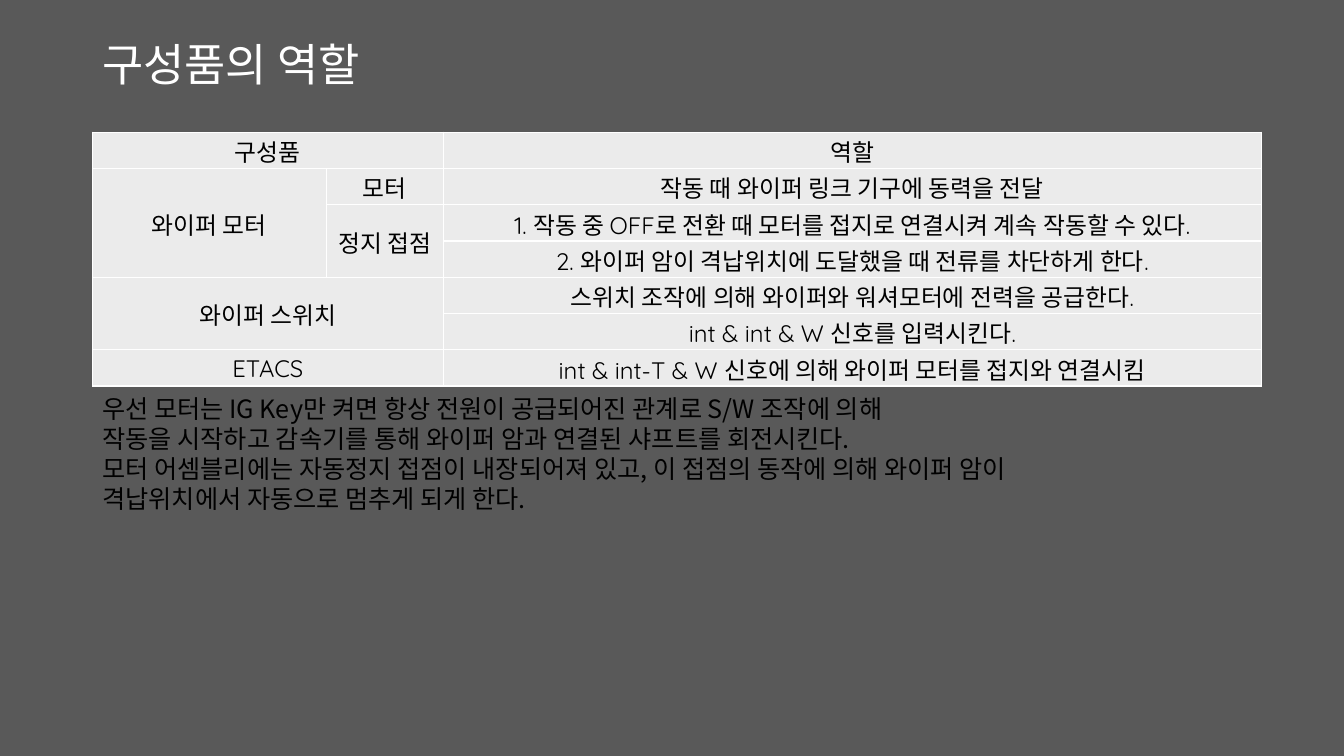
from lxml import etree
from pptx import Presentation
from pptx import util as u
from pptx.dml import color
from pptx.enum import text
from pptx.oxml import ns

COLORS = {"background": "595959", "cell": "EBEBEB", "light": "FFFFFF", "ink": "000000"}


def style_paragraph(paragraph, size, font_name, color_name):
    paragraph.font.size = u.Pt(size)
    paragraph.font.name = font_name
    paragraph.font.color.rgb = color.RGBColor.from_string(COLORS[color_name])


def border_cell(cell):
    properties = cell._tc.get_or_add_tcPr()
    for index, side in enumerate(("lnL", "lnR", "lnT", "lnB")):
        line = etree.Element(ns.qn(f"a:{side}"), w=str(u.Pt(1)))
        fill = etree.SubElement(line, ns.qn("a:solidFill"))
        etree.SubElement(fill, ns.qn("a:srgbClr"), val=COLORS["light"])
        properties.insert(index, line)


presentation = Presentation()
presentation.slide_width = u.Cm(33.87)
presentation.slide_height = u.Cm(19.05)
slide = presentation.slides.add_slide(presentation.slide_layouts[6])
slide.background.fill.solid()
slide.background.fill.fore_color.rgb = color.RGBColor.from_string(COLORS["background"])

left = u.Cm(2.33)
content_width = u.Cm(29.46)

title = slide.shapes.add_textbox(left, u.Cm(0.53), u.Cm(23.7), u.Cm(2.13)).text_frame
title.word_wrap = True
title.vertical_anchor = text.MSO_ANCHOR.MIDDLE
title.text = "구성품의 역할"
style_paragraph(title.paragraphs[0], 32, "Quicksand", "light")

rows = [
    ("구성품", "", "역할"),
    ("와이퍼 모터", "모터", "작동 때 와이퍼 링크 기구에 동력을 전달"),
    ("", "정지 접점", "1. 작동 중 OFF로 전환 때 모터를 접지로 연결시켜 계속 작동할 수 있다."),
    ("", "", "2. 와이퍼 암이 격납위치에 도달했을 때 전류를 차단하게 한다."),
    ("와이퍼 스위치", "", "스위치 조작에 의해 와이퍼와 워셔모터에 전력을 공급한다."),
    ("", "", "int & int & W 신호를 입력시킨다."),
    ("ETACS", "", "int & int-T & W 신호에 의해 와이퍼 모터를 접지와 연결시킴"),
]
merges = [((0, 0), (0, 1)), ((1, 0), (3, 0)), ((2, 1), (3, 1)), ((4, 0), (5, 1)), ((6, 0), (6, 1))]

table = slide.shapes.add_table(
    len(rows), 3, left, u.Cm(3.33), content_width, u.Cm(6.4)
).table
for column, width in zip(table.columns, (5.89, 2.95, 20.62)):
    column.width = u.Cm(width)

for row_index, row in enumerate(rows):
    for column_index, content in enumerate(row):
        cell = table.cell(row_index, column_index)
        cell.text = content
        cell.vertical_anchor = text.MSO_ANCHOR.MIDDLE
        cell.margin_left = cell.margin_right = cell.margin_top = u.Cm(0.04)
        cell.margin_bottom = 0
        cell.fill.solid()
        cell.fill.fore_color.rgb = color.RGBColor.from_string(COLORS["cell"])
        border_cell(cell)
        paragraph = cell.text_frame.paragraphs[0]
        paragraph.alignment = text.PP_ALIGN.CENTER
        style_paragraph(paragraph, 17, "Quicksand", "ink")

for first, last in merges:
    table.cell(*first).merge(table.cell(*last))

explanation_lines = [
    "우선 모터는 IG Key만 켜면 항상 전원이 공급되어진 관계로 S/W 조작에 의해",
    "작동을 시작하고 감속기를 통해 와이퍼 암과 연결된 샤프트를 회전시킨다.",
    "모터 어셈블리에는 자동정지 접점이 내장되어져 있고, 이 접점의 동작에 의해 와이퍼 암이",
    "격납위치에서 자동으로 멈추게 되게 한다.",
]
explanation = slide.shapes.add_textbox(left, u.Cm(9.78), content_width, u.Cm(9.2)).text_frame
explanation.word_wrap = True
explanation.text = "\n".join(explanation_lines)
for paragraph in explanation.paragraphs:
    style_paragraph(paragraph, 18, "Noto Sans CJK KR", "ink")

presentation.save("out.pptx")
